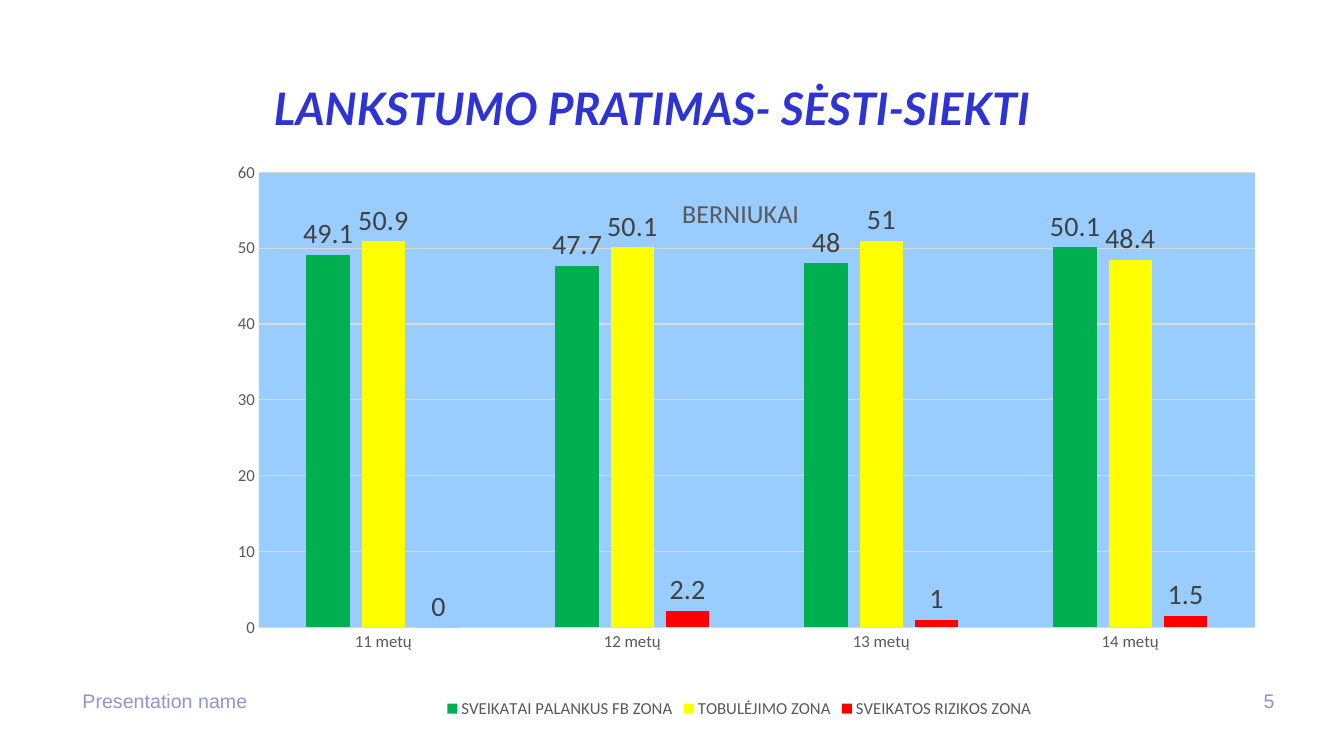
from lxml import etree
from pptx import Presentation
from pptx import util as u
from pptx.chart.data import CategoryChartData
from pptx.dml.color import RGBColor
from pptx.enum import chart as charts, text
from pptx.oxml import parse_xml
from pptx.oxml.ns import nsdecls, qn

BLUE = RGBColor(0x2E, 0x34, 0xD1)
LAVENDER = RGBColor(0x8E, 0x96, 0xCD)
GRAY = RGBColor(0x59, 0x59, 0x59)
DARK_GRAY = RGBColor(0x40, 0x40, 0x40)
LIGHT_GRAY = RGBColor(0xD9, 0xD9, 0xD9)
WHITE = RGBColor(0xFF, 0xFF, 0xFF)
SKY = RGBColor(0x99, 0xCC, 0xFF)
GREEN = RGBColor(0x00, 0xB0, 0x50)
YELLOW = RGBColor(0xFF, 0xFF, 0x00)
RED = RGBColor(0xFF, 0x00, 0x00)

AGES = ["11 metų", "12 metų", "13 metų", "14 metų"]
ZONES = [
    ("SVEIKATAI PALANKUS FB ZONA", [49.1, 47.7, 48, 50.1], GREEN),
    ("TOBULĖJIMO ZONA", [50.9, 50.1, 51, 48.4], YELLOW),
    ("SVEIKATOS RIZIKOS ZONA", [0, 2.2, 1, 1.5], RED),
]


def set_font(font, size, color, name="Calibri", bold=False, italic=False):
    font.size = u.Pt(size)
    font.name = name
    font.bold = bold
    font.italic = italic
    font.color.rgb = color


def write_text(frame, content, align=text.PP_ALIGN.LEFT, line_spacing=None, **font_format):
    frame.word_wrap = True
    frame.auto_size = text.MSO_AUTO_SIZE.NONE
    frame.vertical_anchor = text.MSO_ANCHOR.TOP
    paragraph = frame.paragraphs[0]
    paragraph.alignment = align
    paragraph.line_spacing = line_spacing
    run = paragraph.add_run()
    run.text = content
    set_font(run.font, **font_format)


def place(shape, left, top, width, height):
    shape.left, shape.top = u.Inches(left), u.Inches(top)
    shape.width, shape.height = u.Inches(width), u.Inches(height)


def add_footer(slide, content, left, width, align):
    box = slide.shapes.add_textbox(u.Inches(left), u.Inches(6.79), u.Inches(width), u.Inches(0.4))
    write_text(box.text_frame, content, align, size=14, color=LAVENDER, name="Arial")


def set_layout(element, index, settings):
    for old in element.findall(qn("c:layout")):
        element.remove(old)
    layout = parse_xml(f"<c:layout {nsdecls('c')}><c:manualLayout/></c:layout>")
    for tag, value in settings:
        etree.SubElement(layout[0], qn(f"c:{tag}")).set("val", str(value))
    element.insert(index, layout)


def style_axes(chart):
    for axis in (chart.category_axis, chart.value_axis):
        axis.major_tick_mark = charts.XL_TICK_MARK.NONE
        axis.minor_tick_mark = charts.XL_TICK_MARK.NONE
        set_font(axis.tick_labels.font, 12, GRAY)
    category_line = chart.category_axis.format.line
    value_axis = chart.value_axis
    value_axis.minimum_scale, value_axis.maximum_scale = 0, 60
    value_axis.major_unit = 10
    value_axis.format.line.fill.background()
    for line in (category_line, value_axis.major_gridlines.format.line):
        line.color.rgb = LIGHT_GRAY
        line.width = u.Pt(0.75)


def style_series(series, color):
    series.format.fill.solid()
    series.format.fill.fore_color.rgb = color
    series.invert_if_negative = False
    labels = series.data_labels
    labels.show_value = True
    labels.position = charts.XL_LABEL_POSITION.OUTSIDE_END
    set_font(labels.font, 20, DARK_GRAY)


def style_title(title):
    run = title.text_frame.paragraphs[0].add_run()
    run.text = "BERNIUKAI"
    set_font(run.font, 18.6, GRAY)
    element = title._element
    set_layout(element, 1, [("xMode", "edge"), ("yMode", "edge"), ("x", 0.44), ("y", 0.05)])
    element.find(qn("c:overlay")).set("val", "1")


def style_plot_area(chart):
    area = chart._chartSpace.chart.plotArea
    set_layout(area, 0, [
        ("layoutTarget", "inner"), ("xMode", "edge"), ("yMode", "edge"),
        ("x", 0.034), ("y", 0.018), ("w", 0.966), ("h", 0.812),
    ])
    area.append(parse_xml(
        f"<c:spPr {nsdecls('c', 'a')}><a:solidFill>"
        f'<a:srgbClr val="{SKY}"/></a:solidFill></c:spPr>'
    ))


def add_zone_chart(slide):
    data = CategoryChartData()
    data.categories = AGES
    for name, values, _ in ZONES:
        data.add_series(name, values)
    chart = slide.shapes.add_chart(
        charts.XL_CHART_TYPE.COLUMN_CLUSTERED,
        u.Inches(2.22), u.Inches(1.61), u.Inches(10.23), u.Inches(5.56), data,
    ).chart
    set_font(chart.font, 10, GRAY)
    plot = chart.plots[0]
    plot.gap_width, plot.overlap = 219, -27
    plot.vary_by_categories = False
    for series, (_, _, color) in zip(plot.series, ZONES):
        style_series(series, color)
    style_axes(chart)
    chart.has_title = True
    style_title(chart.chart_title)
    style_plot_area(chart)
    chart.has_legend = True
    chart.legend.position = charts.XL_LEGEND_POSITION.BOTTOM
    chart.legend.include_in_layout = False
    set_font(chart.legend.font, 12, GRAY)


def main():
    presentation = Presentation()
    presentation.slide_width = u.Inches(13.33)
    presentation.slide_height = u.Inches(7.5)
    slide = presentation.slides.add_slide(presentation.slide_layouts[5])
    slide.background.fill.solid()
    slide.background.fill.fore_color.rgb = WHITE
    title = slide.shapes.title
    place(title, 0.72, 0.81, 11.5, 0.8)
    write_text(title.text_frame, "LANKSTUMO PRATIMAS- SĖSTI-SIEKTI", text.PP_ALIGN.CENTER, 0.9,
               size=32, color=BLUE, name="Lato", bold=True, italic=True)
    add_footer(slide, "Presentation name", 0.72, 6.3, text.PP_ALIGN.LEFT)
    add_footer(slide, "5", 12.22, 0.52, text.PP_ALIGN.RIGHT)
    add_zone_chart(slide)
    presentation.save("out.pptx")


if __name__ == "__main__":
    main()
